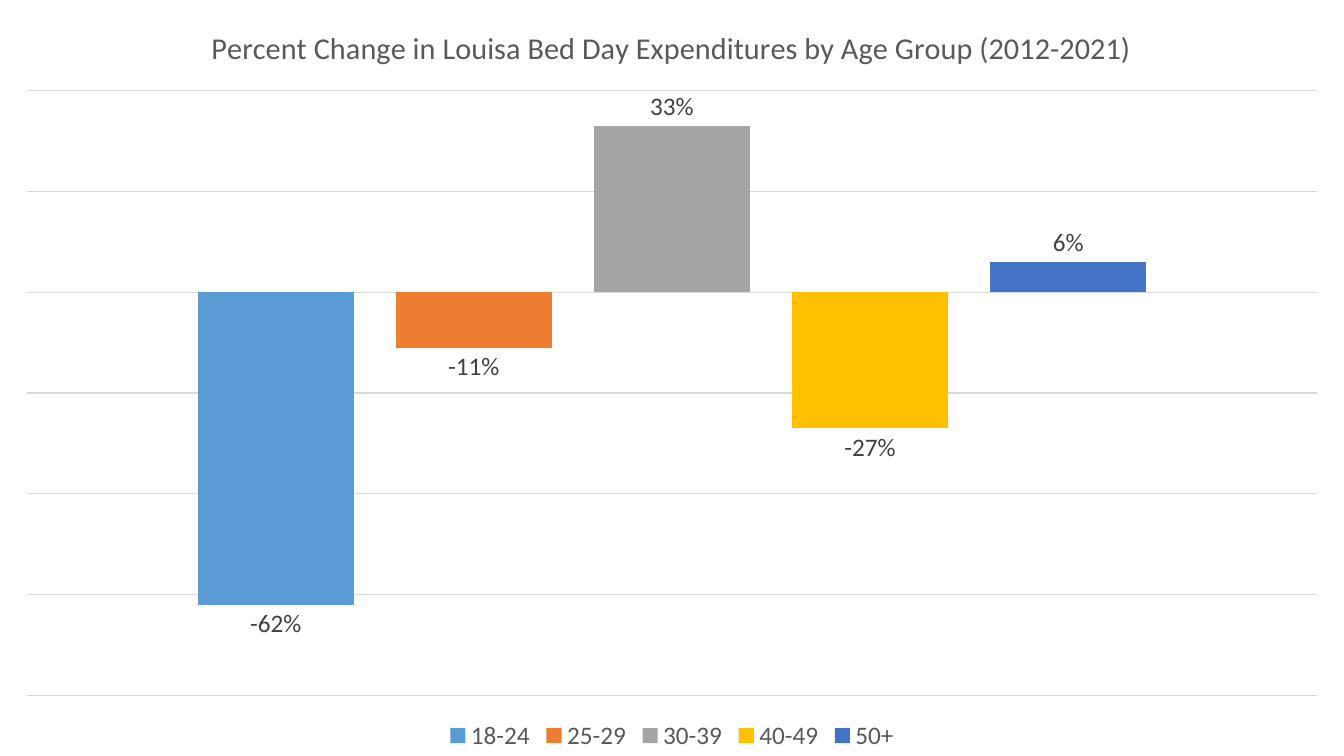
from dataclasses import dataclass
from lxml.etree import SubElement as Sub
from pptx import Presentation
from pptx.chart.data import CategoryChartData as Data
from pptx.dml.color import RGBColor as RGB
from pptx.enum.chart import XL_CHART_TYPE as Kind
from pptx.enum.chart import XL_LABEL_POSITION as Spot
from pptx.enum.chart import XL_LEGEND_POSITION as Side
from pptx.enum.chart import XL_TICK_LABEL_POSITION as Ticks
from pptx.enum.chart import XL_TICK_MARK as Mark
from pptx.oxml.ns import qn
from pptx.util import Pt


@dataclass(frozen=True)
class Theme:
    face: str = "Calibri"
    head: float = 21.6
    body: float = 18
    ink: str = "000000"
    gray: str = "595959"
    label: str = "404040"
    grid: str = "D9D9D9"


THEME = Theme()
WIDE, HIGH = Pt(960), Pt(540)
TITLE = "Percent Change in Louisa Bed Day Expenditures by Age Group (2012-2021)"
GROUPS = [
    ("18-24", -0.62, "5B9BD5"),
    ("25-29", -0.11, "ED7D31"),
    ("30-39", 0.33, "A5A5A5"),
    ("40-49", -0.27, "FFC000"),
    ("50+", 0.06, "4472C4"),
]
FRAME = {"x": 0.02, "y": 0.12, "w": 0.96, "h": 0.8}


def style(font, size, color):
    font.name = THEME.face
    font.size = Pt(size)
    font.bold = False
    font.color.rgb = RGB.from_string(color)


def rule(line):
    line.color.rgb = RGB.from_string(THEME.grid)
    line.width = Pt(0.75)


def add_chart(slide):
    data = Data(number_format="0%")
    data.categories = ["1"]
    for name, value, _ in GROUPS:
        data.add_series(name, [value])
    frame = slide.shapes.add_chart(
        Kind.COLUMN_CLUSTERED, 0, 0, WIDE, HIGH, data)
    chart = frame.chart
    style(chart.font, THEME.body, THEME.ink)
    return chart


def set_title(chart):
    chart.has_title = True
    text = chart.chart_title.text_frame
    text.text = TITLE
    style(text.paragraphs[0].font, THEME.head, THEME.gray)
    chart.chart_title.include_in_layout = False


def set_key(chart):
    chart.has_legend = True
    key = chart.legend
    key.position = Side.BOTTOM
    key.include_in_layout = False
    style(key.font, THEME.body, THEME.gray)


def set_axes(chart):
    base = chart.category_axis
    base.tick_label_position = Ticks.NONE
    base.major_tick_mark = Mark.NONE
    rule(base.format.line)
    scale = chart.value_axis
    scale.minimum_scale, scale.maximum_scale = -0.8, 0.4
    scale.major_unit = 0.2
    scale.visible = False
    scale.has_major_gridlines = True
    rule(scale.major_gridlines.format.line)


def set_bars(chart):
    plot = chart.plots[0]
    plot.gap_width, plot.overlap = 219, -27
    plot.vary_by_categories = False
    for bar, (_, _, color) in zip(plot.series, GROUPS):
        bar.invert_if_negative = False
        bar.format.fill.solid()
        bar.format.fill.fore_color.rgb = RGB.from_string(color)
        labels = bar.data_labels
        labels.show_value = True
        labels.number_format = "0%"
        labels.number_format_is_linked = False
        labels.position = Spot.OUTSIDE_END
        style(labels.font, THEME.body, THEME.label)


def set_frame(chart):
    area = chart.element.find(".//" + qn("c:plotArea"))
    for old in area.findall(qn("c:layout")):
        area.remove(old)
    layout = Sub(area, qn("c:layout"))
    area.insert(0, layout)
    box = Sub(layout, qn("c:manualLayout"))
    Sub(box, qn("c:layoutTarget"), val="inner")
    for side in "xy":
        Sub(box, qn(f"c:{side}Mode"), val="edge")
    for side, part in FRAME.items():
        Sub(box, qn(f"c:{side}"), val=str(part))


def main():
    deck = Presentation()
    deck.slide_width, deck.slide_height = WIDE, HIGH
    slide = deck.slides.add_slide(deck.slide_layouts[6])
    chart = add_chart(slide)
    set_title(chart)
    set_key(chart)
    set_axes(chart)
    set_bars(chart)
    set_frame(chart)
    deck.save("out.pptx")


if __name__ == "__main__":
    main()
